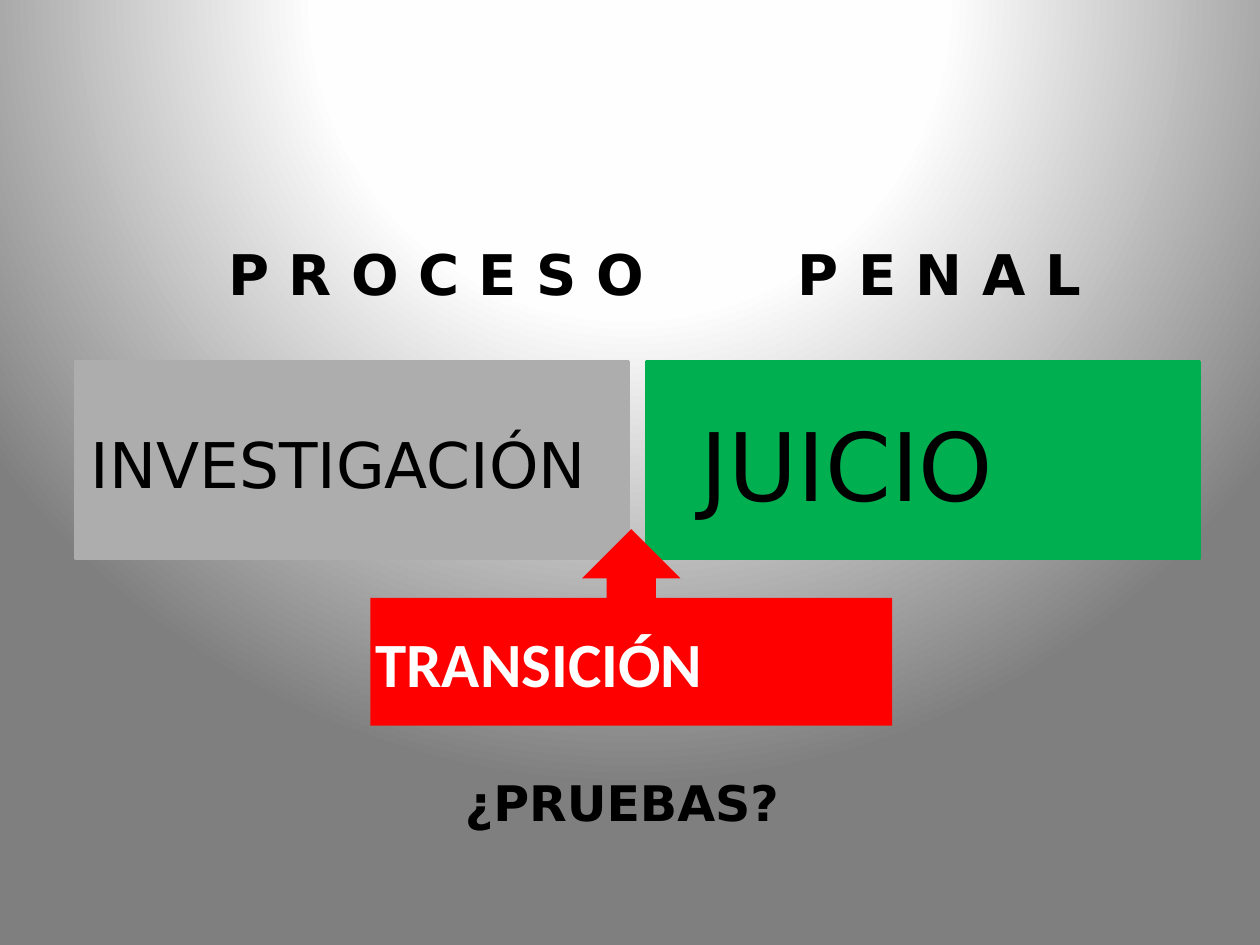
import pptx
import pptx.util
import pptx.dml.color
import pptx.enum.shapes
import pptx.enum.text
import pptx.oxml
import pptx.oxml.ns

Inches = pptx.util.Inches

THEME = {
    "font": "DejaVu Sans", "callout_font": "Calibri",
    "black": "000000", "white": "FFFFFF",
    "gray": "ADADAD", "green": "00B050", "red": "FF0000",
    "title": 32, "stage": 36, "trial": 54, "question": 28,
    "outline": 2, "inset": 0.04,
    "backdrop": [(0, "FFFFFF"), (40, "FEFEFE"), (100, "7F7F7F")],
}

TITLE = ("P R O C E S O\tP E N A L", (1.77, 1.86, 7.04, 0.62))
TITLE_TAB = 4.52
PANEL_COLOURS = ["gray", "green"]
PANEL_LEFT, PANEL_TOP, PANEL_WIDTH, PANEL_HEIGHT, PANEL_GAP = 0.6, 2.87, 4.39, 1.56, 0.14
LABELS = [
    ("INVESTIGACIÓN", (0.68, 3.34, 4.39, 0.69), "stage", False),
    ("JUICIO", (5.52, 3.19, 3.29, 1), "trial", False),
    ("¿PRUEBAS?", (3.65, 6.09, 2.83, 0.57), "question", True),
]
CALLOUT = ("TRANSICIÓN", (2.94, 4.2, 4.14, 1.56))


def colour(name):
    return pptx.dml.color.RGBColor.from_string(THEME[name])


def lengths(values):
    return [Inches(value) for value in values]


def write(box, text, size, bold, font="font", ink="black", anchor="TOP"):
    frame = box.text_frame
    frame.text = text
    frame.word_wrap = True
    frame.auto_size = pptx.enum.text.MSO_AUTO_SIZE.NONE
    frame.vertical_anchor = getattr(pptx.enum.text.MSO_ANCHOR, anchor)
    frame.margin_left = frame.margin_right = Inches(THEME["inset"])
    frame.margin_top = frame.margin_bottom = Inches(THEME["inset"])
    para = frame.paragraphs[0]
    para.alignment = pptx.enum.text.PP_ALIGN.LEFT
    for span in para.runs:
        span.font.name = THEME[font]
        span.font.size = pptx.util.Pt(THEME[size])
        span.font.bold = bold
        span.font.color.rgb = colour(ink)
    return para


def add_filled(page, kind, area, fill):
    shape = page.shapes.add_shape(kind, *lengths(area))
    shape.shadow.inherit = False
    shape.fill.solid()
    shape.fill.fore_color.rgb = colour(fill)
    shape.line.fill.background()
    return shape


def paint_background(page):
    page.background.fill.gradient()
    linear = page.element.find(".//" + pptx.oxml.ns.qn("a:gradFill"))
    stops = "".join(
        f'<a:gs pos="{position * 1000}"><a:srgbClr val="{value}"/></a:gs>'
        for position, value in THEME["backdrop"]
    )
    radial = pptx.oxml.parse_xml(
        f'<a:gradFill {pptx.oxml.ns.nsdecls("a")} rotWithShape="1"><a:gsLst>{stops}</a:gsLst>'
        '<a:path path="circle"><a:fillToRect l="50000" t="-80000" r="50000" b="180000"/>'
        "</a:path></a:gradFill>"
    )
    linear.getparent().replace(linear, radial)


def add_title(page):
    text, area = TITLE
    title = page.shapes.title
    title.left, title.top, title.width, title.height = lengths(area)
    para = write(title, text, "title", True)
    properties = para._p.get_or_add_pPr()
    properties.append(pptx.oxml.parse_xml(
        f'<a:tabLst {pptx.oxml.ns.nsdecls("a")}>'
        f'<a:tab pos="{Inches(TITLE_TAB)}" algn="l"/></a:tabLst>'
    ))


def main():
    kinds = pptx.enum.shapes.MSO_SHAPE
    deck = pptx.Presentation()
    deck.slide_width, deck.slide_height = lengths((10, 7.5))
    page = deck.slides.add_slide(deck.slide_layouts[5])
    paint_background(page)
    add_title(page)

    for index, fill in enumerate(PANEL_COLOURS):
        left = PANEL_LEFT + index * (PANEL_WIDTH + PANEL_GAP)
        area = (left, PANEL_TOP, PANEL_WIDTH, PANEL_HEIGHT)
        panel = add_filled(page, kinds.RECTANGLE, area, fill)
        panel.line.color.rgb = colour(fill)
        panel.line.width = pptx.util.Pt(THEME["outline"])

    for text, area, size, bold in LABELS:
        write(page.shapes.add_textbox(*lengths(area)), text, size, bold)

    text, area = CALLOUT
    callout = add_filled(page, kinds.UP_ARROW_CALLOUT, area, "red")
    write(callout, text, "stage", True, "callout_font", "white", "MIDDLE")

    deck.save("out.pptx")


if __name__ == "__main__":
    main()
